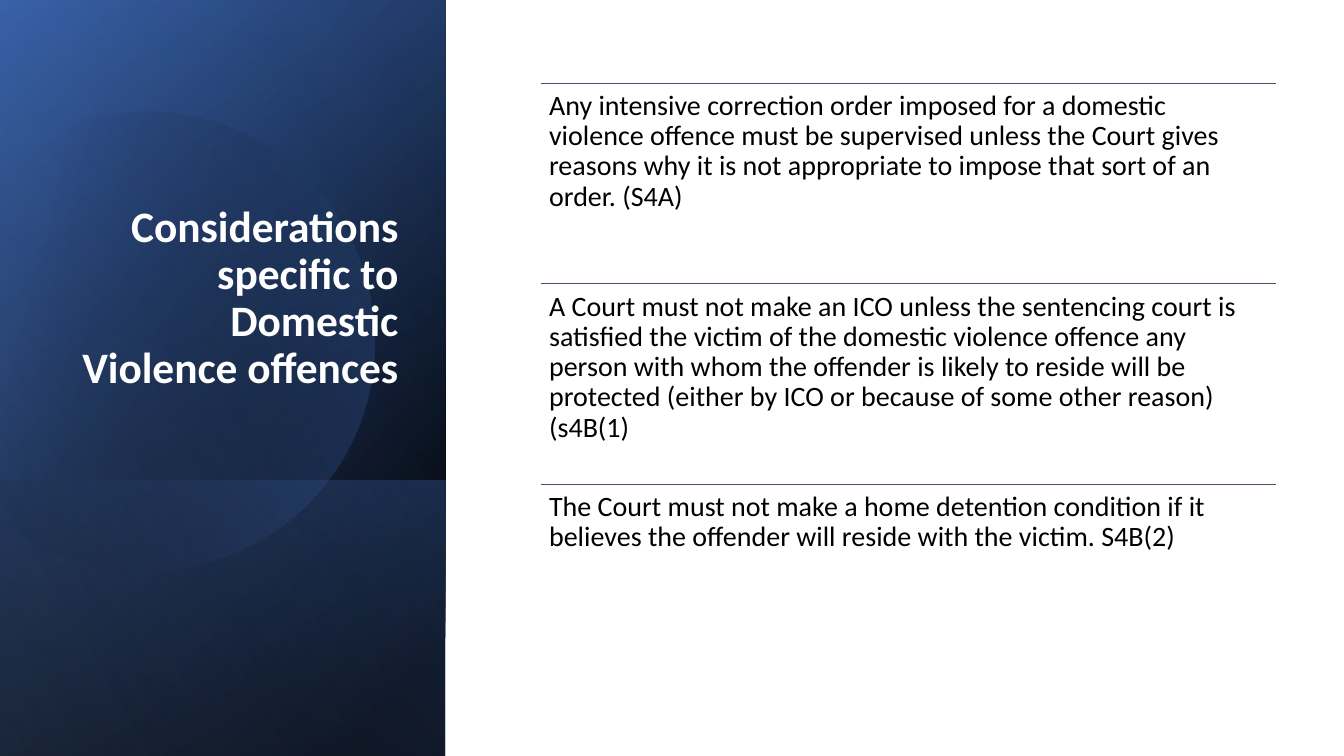
from math import cos, radians, sin

from pptx import Presentation
from pptx.dml.color import RGBColor as RGB
from pptx.enum.shapes import MSO_CONNECTOR as Connector, MSO_SHAPE as Preset
from pptx.enum.text import MSO_ANCHOR as Anchor, PP_ALIGN as Align
from pptx.oxml import parse_xml
from pptx.oxml.ns import nsdecls, qn
from pptx.util import Pt

# Content
TITLE = "Considerations specific to Domestic Violence offences"
RULES = [
    "Any intensive correction order imposed for a domestic violence offence must be "
    "supervised unless the Court gives reasons why it is not appropriate to impose "
    "that sort of an order. (S4A)",
    "A Court must not make an ICO unless the sentencing court is satisfied the victim "
    "of the domestic violence offence any person with whom the offender is likely to "
    "reside will be protected (either by ICO or because of some other reason) (s4B(1)",
    "The Court must not make a home detention condition if it believes the offender "
    "will reside with the victim. S4B(2)",
]

THEME = {
    "font": "Calibri", "title_size": Pt(31), "rule_size": Pt(20),
    "title": RGB(0xFF, 0xFF, 0xFF), "rule": RGB(0, 0, 0), "line": RGB(0x44, 0x54, 0x6A),
    "black": "000000", "navy": "2F5597", "blue": "4472C4", "pale": "8FAADC",
}

# Layout in points
SLIDE_W, SLIDE_H = 960, 540
PANEL_W = 318.2
TITLE_BOX = (46, 132.5, 245.5, 188.6)
TITLE_GAP = 40.5
RULES_LEFT, RULES_TOP, RULES_W, RULE_H = 386.2, 59.2, 525.3, 143.3
RULE_INSET = 6

# Panel washes: top, gradient stops (position, colour, opacity), angle
BASE_WASHES = [
    (0, [(8, "black", 100), (100, "navy", 100)], 50),
    (0, [(0, "black", 0), (99, "blue", 46)], 30),
    (343, [(2, "blue", 29), (100, "black", 30)], 130),
]
TOP_WASH = (0, [(0, "black", 0), (99, "pale", 11)], 120)

# Disc outline in slide inches: start, then curves (three points) and lines (one)
DISC_START = (1.49, 1.1)
DISC_SEGMENTS = [
    [(2.46, 1.12), (3.35, 1.77), (3.63, 2.75)],
    [(3.98, 3.97), (3.28, 5.23), (2.07, 5.58)],
    [(1.31, 5.8), (0.53, 5.61), (-0.03, 5.14)],
    [(-0.15, 5.03)], [(-0.15, 1.75)], [(0, 1.61)],
    [(0.23, 1.42), (0.5, 1.28), (0.8, 1.19)],
    [(1.03, 1.13), (1.26, 1.1), DISC_START],
]
DISC_CENTRE, DISC_TURN = (1.58, 3.34), -16.1
DISC_STOPS, DISC_ANGLE = [(29, "black", 0), (100, "blue", 43)], 30

deck = Presentation()
deck.slide_width, deck.slide_height = Pt(SLIDE_W), Pt(SLIDE_H)
slide = deck.slides.add_slide(deck.slide_layouts[6])


def fill_gradient(shape, stops, angle):
    shape.shadow.inherit = False
    shape.line.fill.background()
    shape.fill.background()
    stop_xml = "".join(
        f'<a:gs pos="{pos * 1000}"><a:srgbClr val="{THEME[colour]}">'
        f'<a:alpha val="{opacity * 1000}"/></a:srgbClr></a:gs>'
        for pos, colour, opacity in stops)
    gradient = parse_xml(
        f'<a:gradFill {nsdecls("a")} rotWithShape="1"><a:gsLst>{stop_xml}</a:gsLst>'
        f'<a:lin ang="{angle * 60000}" scaled="0"/></a:gradFill>')
    properties = shape._element.spPr
    properties.replace(properties.find(qn("a:noFill")), gradient)


def add_wash(top, stops, angle):
    """Cover the panel from top down with a mirrored rectangle on its side."""
    height = SLIDE_H - top
    left = (PANEL_W - height) / 2
    wash = slide.shapes.add_shape(Preset.RECTANGLE, Pt(left), Pt(top - left),
                                  Pt(height), Pt(PANEL_W))
    wash.rotation = 90
    wash._element.spPr.find(qn("a:xfrm")).set("flipH", "1")
    fill_gradient(wash, stops, angle)


def unturn(point):
    """Undo the disc's rotation, giving points."""
    cx, cy = DISC_CENTRE
    dx, dy, turn = point[0] - cx, point[1] - cy, radians(-DISC_TURN)
    return (72 * (cx + dx * cos(turn) - dy * sin(turn)),
            72 * (cy + dx * sin(turn) + dy * cos(turn)))


def bend(shape, segments):
    """Turn each run of three line segments that forms a curve into a Bezier."""
    lines = iter(list(shape._element.spPr.iter(qn("a:lnTo"))))
    for segment in segments:
        parts = [next(lines) for _ in segment]
        if len(parts) == 3:
            curve = parse_xml(f'<a:cubicBezTo {nsdecls("a")}/>')
            parts[0].addprevious(curve)
            for part in parts:
                curve.append(part[0])
                part.getparent().remove(part)


def add_text(shapes, box, text, size, colour):
    holder = shapes.add_textbox(*map(Pt, box))
    frame = holder.text_frame
    frame.word_wrap = True
    paragraph = frame.paragraphs[0]
    paragraph.text = text
    paragraph.line_spacing = 0.9
    paragraph.font.name = THEME["font"]
    paragraph.font.size = size
    paragraph.font.color.rgb = colour
    return frame, paragraph


# Left panel with disc
for base_wash in BASE_WASHES:
    add_wash(*base_wash)

builder = slide.shapes.build_freeform(*unturn(DISC_START), scale=Pt(1))
builder.add_line_segments([unturn(point) for segment in DISC_SEGMENTS
                           for point in segment], close=True)
disc = builder.convert_to_shape()
bend(disc, DISC_SEGMENTS)
disc.rotation = DISC_TURN
fill_gradient(disc, DISC_STOPS, DISC_ANGLE)

add_wash(*TOP_WASH)

# Title
title_frame, title = add_text(slide.shapes, TITLE_BOX, TITLE,
                              THEME["title_size"], THEME["title"])
title_frame.vertical_anchor = Anchor.BOTTOM
title_frame.margin_bottom = Pt(TITLE_GAP)
title.alignment = Align.RIGHT
title.font.bold = True

# Rules, each under a thin line
rule_list = slide.shapes.add_group_shape().shapes
for index, rule in enumerate(RULES):
    top = RULES_TOP + index * RULE_H
    divider = rule_list.add_connector(Connector.STRAIGHT, Pt(RULES_LEFT), Pt(top),
                                      Pt(RULES_LEFT + RULES_W), Pt(top))
    divider.line.color.rgb = THEME["line"]
    divider.line.width = Pt(0.5)
    divider._element.spPr.append(parse_xml(f'<a:effectLst {nsdecls("a")}/>'))
    rule_frame, _ = add_text(rule_list, (RULES_LEFT, top, RULES_W, RULE_H), rule,
                             THEME["rule_size"], THEME["rule"])
    rule_frame.margin_left = rule_frame.margin_right = Pt(RULE_INSET)
    rule_frame.margin_top = rule_frame.margin_bottom = Pt(RULE_INSET)

deck.save("out.pptx")
